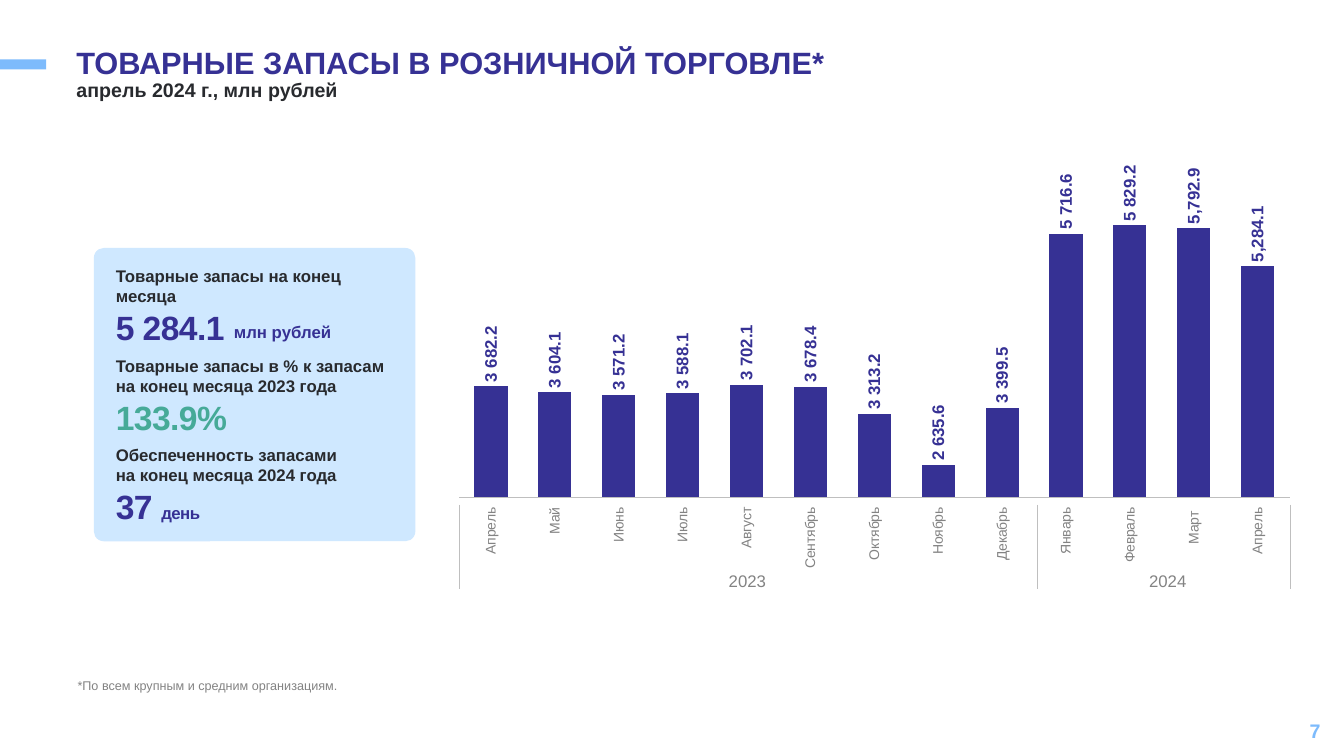
from lxml import etree
from pptx import Presentation
from pptx.chart.data import CategoryChartData
from pptx.dml.color import RGBColor
from pptx.enum import chart as ch, shapes, text
from pptx.oxml import parse_xml
from pptx.oxml.ns import nsdecls, qn
from pptx.util import Pt

TITLE = "ТОВАРНЫЕ ЗАПАСЫ В РОЗНИЧНОЙ ТОРГОВЛЕ*"
SUBTITLE = "апрель 2024 г., млн рублей"
FOOTNOTE = "*По всем крупным и средним организациям."
PAGE = "7"
# caption, value, unit in the same line, colour key
INDICATORS = [
    ("Товарные запасы на конец\vмесяца", "5 284.1", "", "navy"),
    ("Товарные запасы в % к запасам\vна конец месяца 2023 года", "133.9%", "", "green"),
    ("Обеспеченность запасами\vна конец месяца 2024 года", "37 ", "день", "navy"),
]
STOCK_UNIT = "млн рублей"
STOCKS = [
    ("Апрель", 3682.2), ("Май", 3604.1), ("Июнь", 3571.2), ("Июль", 3588.1),
    ("Август", 3702.1), ("Сентябрь", 3678.4), ("Октябрь", 3313.2),
    ("Ноябрь", 2635.6), ("Декабрь", 3399.5), ("Январь", 5716.6),
    ("Февраль", 5829.2), ("Март ", 5792.9), ("Апрель", 5284.1),
]
SPACE_FORMAT, COMMA_FORMAT = r"#\ ##0.0", "#,##0.0"
COMMA_POINTS = (11, 12)
YEARS = [("2023", 455), ("2024", 755.3)]
YEAR_BORDERS = (328.3, 740.9, 921.6)
PLOT = {"x": 0.017, "y": 0.038, "w": 0.966, "h": 0.635}

THEME = {
    "font": "Arial",
    "navy": "363194", "green": "46AA98", "ink": "282A2E", "grey": "838383",
    "rule": "BFBFBF", "sky": "7DBBFC", "panel": "CFE8FF",
    "title": 22, "subtitle": 14, "value": 24, "body": 12, "axis": 10,
    "note": 9, "chart": 18,
}


def color(key):
    return RGBColor.from_string(THEME[key])


def style(font, size, color_key, bold=False):
    font.name = THEME["font"]
    font.size = Pt(THEME[size])
    font.color.rgb = color(color_key)
    font.bold = bold


def add_text(slide, box, runs, color_key, bold=True, align=None, tight=False,
             wrap=True, line_spacing=None, anchor=text.MSO_ANCHOR.TOP):
    """Add a one-paragraph box; runs are (words, size key, letter spacing)."""
    frame = slide.shapes.add_textbox(*map(Pt, box)).text_frame
    frame.word_wrap = wrap
    frame.vertical_anchor = anchor
    if tight:
        frame.margin_left = frame.margin_right = frame.margin_bottom = 0
        frame.margin_top = Pt(0.7)
    paragraph = frame.paragraphs[0]
    paragraph.alignment = align
    paragraph.line_spacing = line_spacing
    for words, size, spacing in runs:
        start = len(paragraph.runs)
        for index, line in enumerate(words.split("\v")):
            if index:
                paragraph.add_line_break()
            paragraph.add_run().text = line
        for run in paragraph.runs[start:]:
            style(run.font, size, color_key, bold)
            if spacing:
                run.font._element.set("spc", str(int(spacing * 100)))


def add_block(slide, kind, box, fill):
    block = slide.shapes.add_shape(kind, *map(Pt, box))
    block.shadow.inherit = False
    block.fill.solid()
    block.fill.fore_color.rgb = color(fill)
    block.line.fill.background()
    return block


def turn_upright(parent):
    """Rotate the chart text held by this element to read bottom to top."""
    body = parent.find(qn("c:txPr")).find(qn("a:bodyPr"))
    body.set("rot", "-5400000")
    body.set("vert", "horz")


def place_plot(chart):
    area = chart._chartSpace.chart.plotArea
    for layout in area.findall(qn("c:layout")):
        area.remove(layout)
    sides = "".join(f'<c:{side} val="{share}"/>' for side, share in PLOT.items())
    area.insert(0, parse_xml(
        f'<c:layout {nsdecls("c")}><c:manualLayout><c:layoutTarget val="inner"/>'
        f'<c:xMode val="edge"/><c:yMode val="edge"/>{sides}</c:manualLayout></c:layout>'))


def add_stock_chart(slide):
    stocks = CategoryChartData(number_format=SPACE_FORMAT)
    stocks.categories = [month for month, _ in STOCKS]
    stocks.add_series("Series 1", [amount for _, amount in STOCKS])
    chart = slide.shapes.add_chart(
        ch.XL_CHART_TYPE.COLUMN_CLUSTERED, Pt(317.5), Pt(94.3), Pt(614.2), Pt(388),
        stocks).chart
    style(chart.font, "chart", "ink")
    chart.has_legend = chart.has_title = False
    place_plot(chart)

    amounts = chart.value_axis
    amounts.minimum_scale, amounts.maximum_scale = 2200, 6800
    amounts.has_major_gridlines = amounts.visible = False

    months = chart.category_axis
    months.tick_label_position = ch.XL_TICK_LABEL_POSITION.LOW
    months.major_tick_mark = months.minor_tick_mark = ch.XL_TICK_MARK.NONE
    months.format.line.color.rgb = color("rule")
    months.format.line.width = Pt(1)
    style(months.tick_labels.font, "axis", "grey")
    turn_upright(months._element)

    plot = chart.plots[0]
    plot.gap_width = 93
    plot.vary_by_categories = False
    bars = plot.series[0]
    bars.format.fill.solid()
    bars.format.fill.fore_color.rgb = color("navy")

    labels = bars.data_labels
    labels.show_value = True
    labels.number_format = SPACE_FORMAT
    labels.number_format_is_linked = False
    labels.position = ch.XL_LABEL_POSITION.OUTSIDE_END
    style(labels.font, "body", "navy", True)
    turn_upright(labels._element)
    for index in COMMA_POINTS:
        label = bars.points[index].data_label
        style(label.font, "body", "navy", True)
        label.position = ch.XL_LABEL_POSITION.OUTSIDE_END
        element = labels._element.xpath(f'c:dLbl[c:idx/@val="{index}"]')[0]
        turn_upright(element)
        number = etree.Element(qn("c:numFmt"), formatCode=COMMA_FORMAT, sourceLinked="0")
        element.find(qn("c:idx")).addnext(number)


def add_years(slide):
    for x in YEAR_BORDERS:
        border = slide.shapes.add_connector(
            shapes.MSO_CONNECTOR.STRAIGHT, Pt(x), Pt(360.7), Pt(x), Pt(420.5))
        border.line.color.rgb = color("rule")
        border.line.width = Pt(1)
        etree.SubElement(border._element.spPr, qn("a:effectLst"))
    for year, left in YEARS:
        add_text(slide, (left, 407, 157.7, 16), [(year, "body", 0)], "grey",
                 bold=False, align=text.PP_ALIGN.CENTER, tight=True)


def add_indicators(slide):
    panel = add_block(slide, shapes.MSO_SHAPE.ROUNDED_RECTANGLE,
                      (67, 177.1, 229.7, 209.5), "panel")
    panel.adjustments[0] = 0.034
    left, top, pitch, value_drop = 75.6, 186.5, 63.7, 29.5
    for row, (caption, value, unit, value_color) in enumerate(INDICATORS):
        y = top + row * pitch
        add_text(slide, (left, y, 243, 36), [(caption, "body", 0)], "ink")
        runs = [(value, "value", -0.4)]
        if unit:
            runs.append((unit, "body", -0.4))
        add_text(slide, (left, y + value_drop, 132, 36), runs, value_color)
    add_text(slide, (160, 226.1, 85, 21.6), [(STOCK_UNIT, "body", 0)], "navy", wrap=False)


def main():
    deck = Presentation()
    deck.slide_width, deck.slide_height = Pt(960), Pt(540)
    slide = deck.slides.add_slide(deck.slide_layouts[6])
    add_block(slide, shapes.MSO_SHAPE.RECTANGLE, (0, 42.5, 33, 7), "sky")
    add_text(slide, (734.4, 507.6, 216, 28.8), [(PAGE, "subtitle", 0)], "sky",
             align=text.PP_ALIGN.RIGHT, anchor=text.MSO_ANCHOR.MIDDLE)
    add_text(slide, (47.5, 31, 749.5, 41), [(TITLE, "title", 0)], "navy", line_spacing=0.9)
    add_text(slide, (47.5, 54, 749.5, 31.7), [(SUBTITLE, "subtitle", 0)], "ink",
             line_spacing=0.9)
    add_indicators(slide)
    add_stock_chart(slide)
    add_text(slide, (55.4, 483.8, 458, 12.2), [(FOOTNOTE, "note", 0)], "grey",
             bold=False, tight=True)
    add_years(slide)
    deck.save("out.pptx")


if __name__ == "__main__":
    main()
